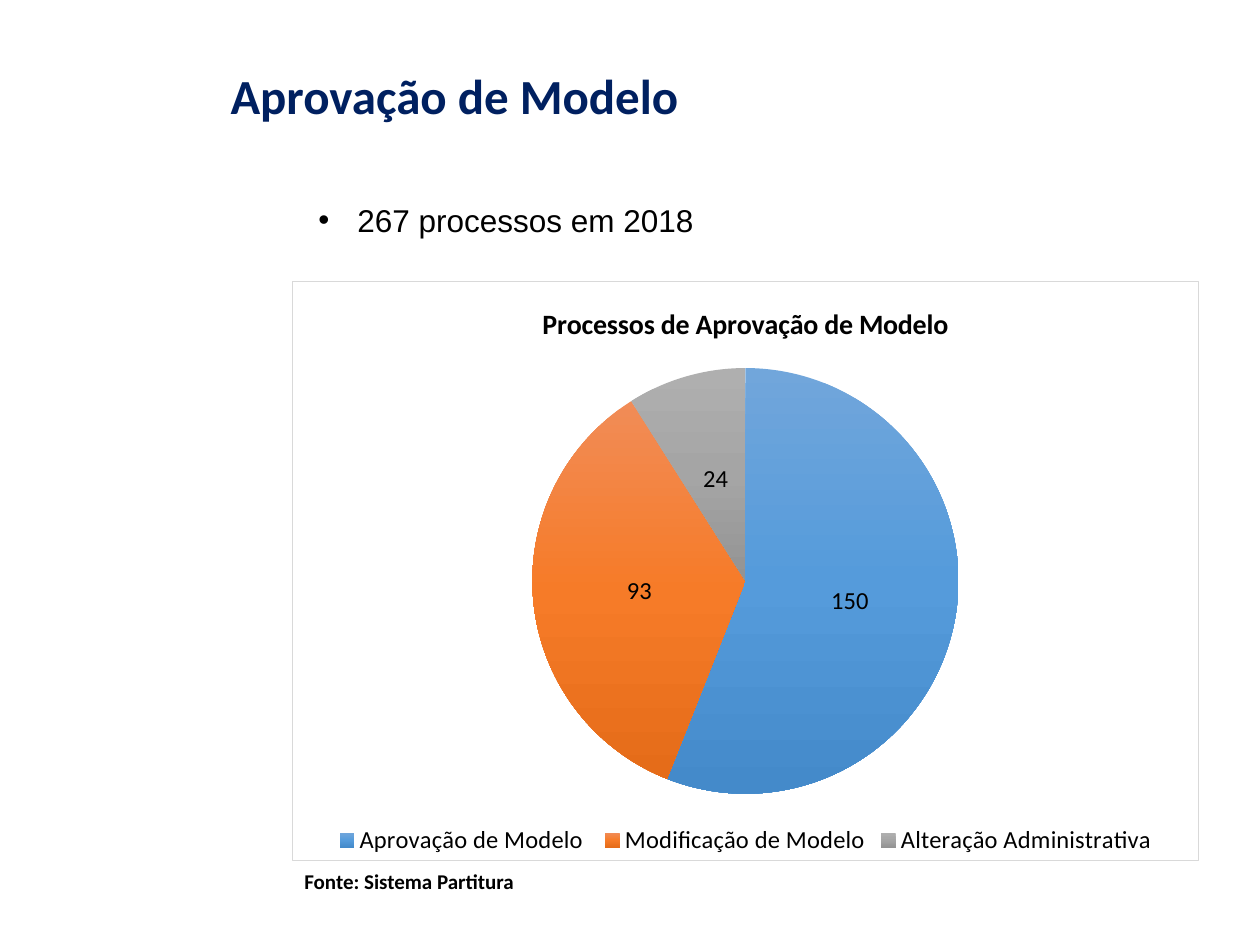
from copy import deepcopy
from dataclasses import dataclass

from lxml.etree import SubElement
from pptx import Presentation
from pptx.chart.data import CategoryChartData
from pptx.dml.color import RGBColor
from pptx.enum.chart import XL_CHART_TYPE as ChartType
from pptx.enum.chart import XL_LABEL_POSITION as LabelPosition
from pptx.enum.chart import XL_LEGEND_POSITION as LegendPosition
from pptx.enum.text import MSO_ANCHOR as Anchor
from pptx.enum.text import MSO_AUTO_SIZE as AutoSize
from pptx.enum.text import PP_ALIGN as Align
from pptx.oxml import parse_xml
from pptx.oxml.ns import nsdecls, qn
from pptx.util import Emu, Pt

PX_PER_INCH = 126


@dataclass(frozen=True)
class Box:
    left: int
    top: int
    width: int
    height: int


@dataclass(frozen=True)
class Line:
    text: str
    box: Box
    size: int
    font: str = "Calibri"
    color: str = "000000"
    bold: bool = True
    indent: int = 0


@dataclass(frozen=True)
class Slice:
    category: str
    percent: int
    label: str
    gradient: tuple[str, str, str]


HEADING = Line("Aprovação de Modelo", Box(218, 59, 1042, 72), 28, color="002060")
TOTAL = Line("267 processos em 2018", Box(306, 195, 880, 50), 18, font="Arial",
             bold=False, indent=39)
SOURCE = Line("Fonte: Sistema Partitura", Box(292, 862, 573, 38), 12)
CHART_BOX = Box(292, 281, 907, 580)
CHART_TITLE = "Processos de Aprovação de Modelo"
SLICES = (
    Slice("Aprovação de Modelo ", 56, "150", ("71A6DB", "559BDB", "448ACA")),
    Slice("Modificação de Modelo", 35, "93", ("F18C57", "F67B28", "E56C19")),
    Slice("Alteração Administrativa", 9, "24", ("AFAFAF", "A5A5A5", "939393")),
)


def px(length: int) -> Emu:
    return Emu(round(length * 914400 / PX_PER_INCH))


def rgb(color: str) -> RGBColor:
    return RGBColor.from_string(color)


def area(box: Box) -> tuple[Emu, Emu, Emu, Emu]:
    return px(box.left), px(box.top), px(box.width), px(box.height)


def style_font(font, size: int, bold: bool, color: str = "000000",
               name: str = "Calibri") -> None:
    font.name = name
    font.size = Pt(size)
    font.bold = bold
    font.color.rgb = rgb(color)


def write_line(shape, line: Line) -> None:
    shape.left, shape.top, shape.width, shape.height = area(line.box)
    frame = shape.text_frame
    frame.text = line.text
    frame.word_wrap = True
    frame.auto_size = AutoSize.NONE
    frame.vertical_anchor = Anchor.TOP
    paragraph = frame.paragraphs[0]
    paragraph.alignment = Align.LEFT
    if line.indent:
        properties = paragraph._p.get_or_add_pPr()
        properties.set("marL", str(px(line.indent)))
        properties.set("indent", str(-px(line.indent)))
        SubElement(properties, qn("a:buFont")).set("typeface", "Arial")
        SubElement(properties, qn("a:buChar")).set("char", "•")
    style_font(paragraph.runs[0].font, line.size, line.bold, line.color, line.font)


def add_line(slide, line: Line) -> None:
    write_line(slide.shapes.add_textbox(*area(line.box)), line)


def paint_slice(point, part: Slice) -> None:
    fill = point.format.fill
    fill.gradient()
    fill.gradient_angle = 270
    stops = point.format._element.find(".//" + qn("a:gsLst")) if hasattr(
        point.format, "_element") else fill._fill._gradFill.gsLst
    stops.append(deepcopy(stops[0]))
    for index, (stop, color) in enumerate(zip(fill.gradient_stops, part.gradient)):
        stop.position = index / 2
        stop.color.rgb = rgb(color)
    label = point.data_label
    label.text_frame.text = part.label
    style_font(label.text_frame.paragraphs[0].runs[0].font, 14, False)
    label.position = LabelPosition.CENTER


def add_border(chart, color: str, width: float) -> None:
    border = parse_xml(
        f'<c:spPr {nsdecls("c", "a")}><a:solidFill><a:srgbClr val="FFFFFF"/></a:solidFill>'
        f'<a:ln w="{Pt(width)}"><a:solidFill><a:srgbClr val="{color}"/></a:solidFill></a:ln>'
        f'</c:spPr>')
    chart._chartSpace.find(qn("c:chart")).addnext(border)


def add_pie(slide) -> None:
    data = CategoryChartData()
    data.categories = [part.category for part in SLICES]
    data.add_series("Series 1", [part.percent for part in SLICES])
    chart = slide.shapes.add_chart(ChartType.PIE, *area(CHART_BOX), data).chart
    style_font(chart.font, 14, False)
    chart.has_title = True
    title = chart.chart_title.text_frame
    title.text = CHART_TITLE
    style_font(title.paragraphs[0].runs[0].font, 16, True)
    chart.has_legend = True
    chart.legend.position = LegendPosition.BOTTOM
    chart.legend.include_in_layout = False
    style_font(chart.legend.font, 14, False)

    pie = chart.plots[0]
    pie.vary_by_categories = True
    series = pie.series[0]
    labels = series.data_labels
    labels.show_percentage = True
    labels.show_value = False
    labels.position = LabelPosition.CENTER
    style_font(labels.font, 14, True)
    for index, part in enumerate(SLICES):
        paint_slice(series.points[index], part)
    add_border(chart, "D9D9D9", 0.75)


def main() -> None:
    deck = Presentation()
    deck.slide_width, deck.slide_height = px(1260), px(945)
    slide = deck.slides.add_slide(deck.slide_layouts[5])
    add_pie(slide)
    write_line(slide.shapes.title, HEADING)
    add_line(slide, TOTAL)
    add_line(slide, SOURCE)
    deck.save("out.pptx")


if __name__ == "__main__":
    main()
